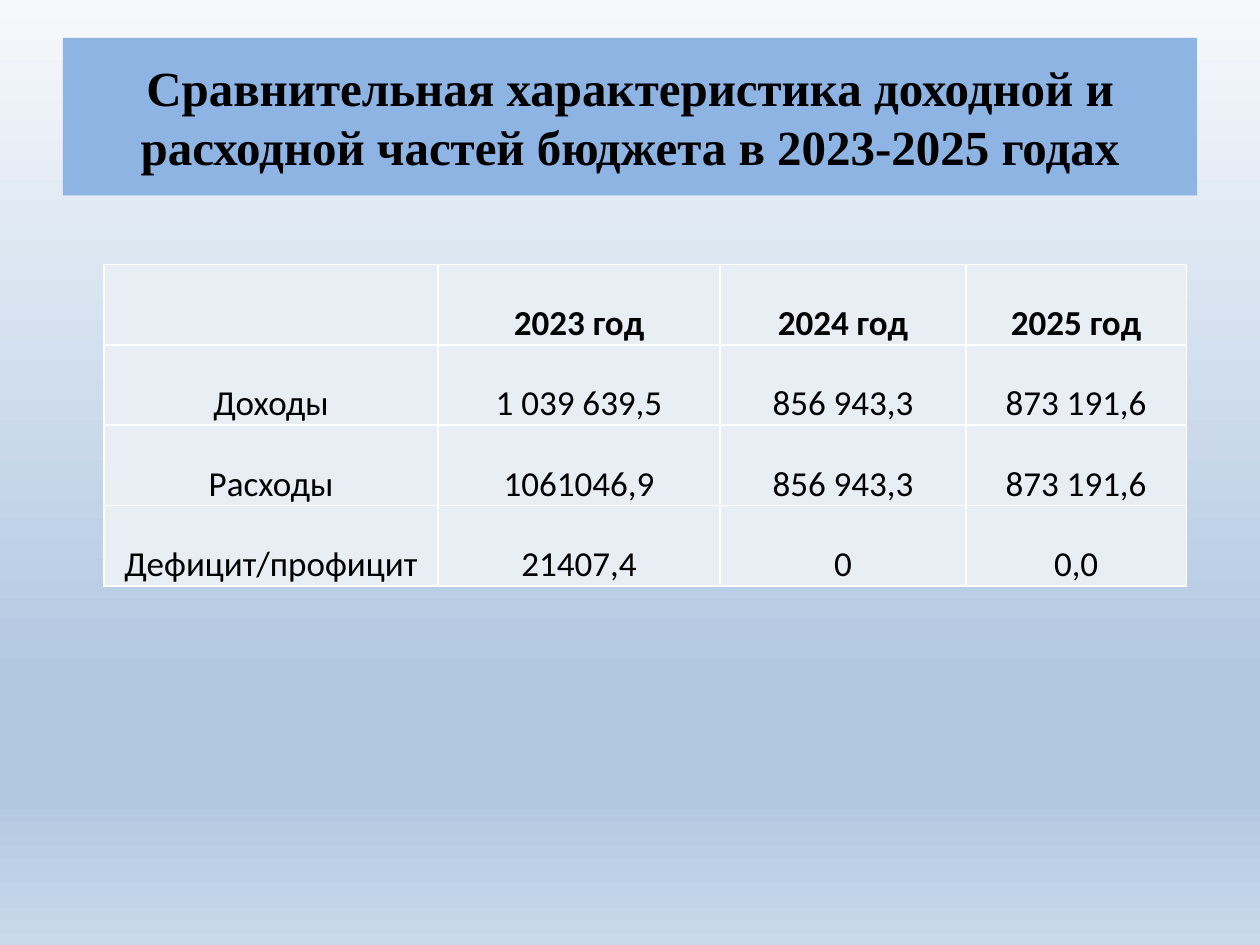
from lxml.etree import SubElement
from pptx import Presentation
from pptx.dml.color import RGBColor
from pptx.enum.shapes import MSO_SHAPE
from pptx.enum.text import MSO_ANCHOR, PP_ALIGN
from pptx.oxml.ns import qn
from pptx.util import Pt

COLORS = {"title": "8EB4E3", "cell": "E9EDF4", "text": "000000", "line": "FFFFFF"}
STOPS = [(0, "F6F9FC"), (74, "B0C6E1"), (83, "B0C6E1"), (100, "CAD9EB")]
ROWS = [
    ["", "2023 год", "2024 год", "2025 год"],
    ["Доходы", "1 039 639,5", "856 943,3", "873 191,6"],
    ["Расходы", "1061046,9", "856 943,3", "873 191,6"],
    ["Дефицит/профицит", "21407,4", "0", "0,0"],
]
WIDTHS = [190.8, 161.28, 140.4, 126]
HEIGHT = 45.9


def add_text(frame, text, font, size, bold):
    para = frame.paragraphs[0]
    para.alignment = PP_ALIGN.CENTER
    run = para.add_run()
    run.text = text
    run.font.name = font
    run.font.size = Pt(size)
    run.font.bold = bold
    run.font.color.rgb = RGBColor.from_string(COLORS["text"])
    return para


def add_edges(cell):
    props = cell._tc.get_or_add_tcPr()
    for side in ("lnL", "lnR", "lnT", "lnB"):
        line = SubElement(props, qn(f"a:{side}"), w=str(Pt(1)))
        fill = SubElement(line, qn("a:solidFill"))
        SubElement(fill, qn("a:srgbClr"), val=COLORS["line"])


deck = Presentation()
deck.slide_width = Pt(720)
deck.slide_height = Pt(540)
slide = deck.slides.add_slide(deck.slide_layouts[6])

back = slide.background.fill
back.gradient()
back.gradient_angle = 270
stops = slide.background._cSld.find(".//" + qn("a:gsLst"))
for stop in list(stops):
    stops.remove(stop)
for place, color in STOPS:
    stop = SubElement(stops, qn("a:gs"), pos=str(place * 1000))
    SubElement(stop, qn("a:srgbClr"), val=color)

title = slide.shapes.add_shape(MSO_SHAPE.RECTANGLE, Pt(36), Pt(21.6), Pt(648), Pt(90))
title.shadow.inherit = False
title.fill.solid()
title.fill.fore_color.rgb = RGBColor.from_string(COLORS["title"])
title.line.fill.background()
title.text_frame.word_wrap = True
title.text_frame.vertical_anchor = MSO_ANCHOR.MIDDLE
add_text(
    title.text_frame,
    "Сравнительная характеристика доходной и расходной частей бюджета в 2023-2025 годах",
    "Times New Roman", 28, True,
)

table = slide.shapes.add_table(
    len(ROWS), len(WIDTHS), Pt(59.5), Pt(151.2), Pt(sum(WIDTHS)), Pt(HEIGHT * len(ROWS))
).table
table.first_row = False
table.horz_banding = False
for col, width in zip(table.columns, WIDTHS):
    col.width = Pt(width)
for r, row in enumerate(ROWS):
    table.rows[r].height = Pt(HEIGHT)
    for c, text in enumerate(row):
        cell = table.cell(r, c)
        add_edges(cell)
        cell.fill.solid()
        cell.fill.fore_color.rgb = RGBColor.from_string(COLORS["cell"])
        if not text:
            continue
        cell.vertical_anchor = MSO_ANCHOR.BOTTOM
        loose = r in (1, 2) and c > 0
        tight = (r, c) == (2, 1)
        side = 0 if tight else 5 if loose else 0.75
        cell.margin_left = cell.margin_right = Pt(side)
        cell.margin_top = Pt(0 if loose else 0.75)
        cell.margin_bottom = Pt(0)
        para = add_text(cell.text_frame, text, "Calibri", 20, r == 0)
        if loose:
            para.line_spacing = 1.07 if tight else 1.15
            para.space_after = Pt(8 if tight else 10)

deck.save("out.pptx")
